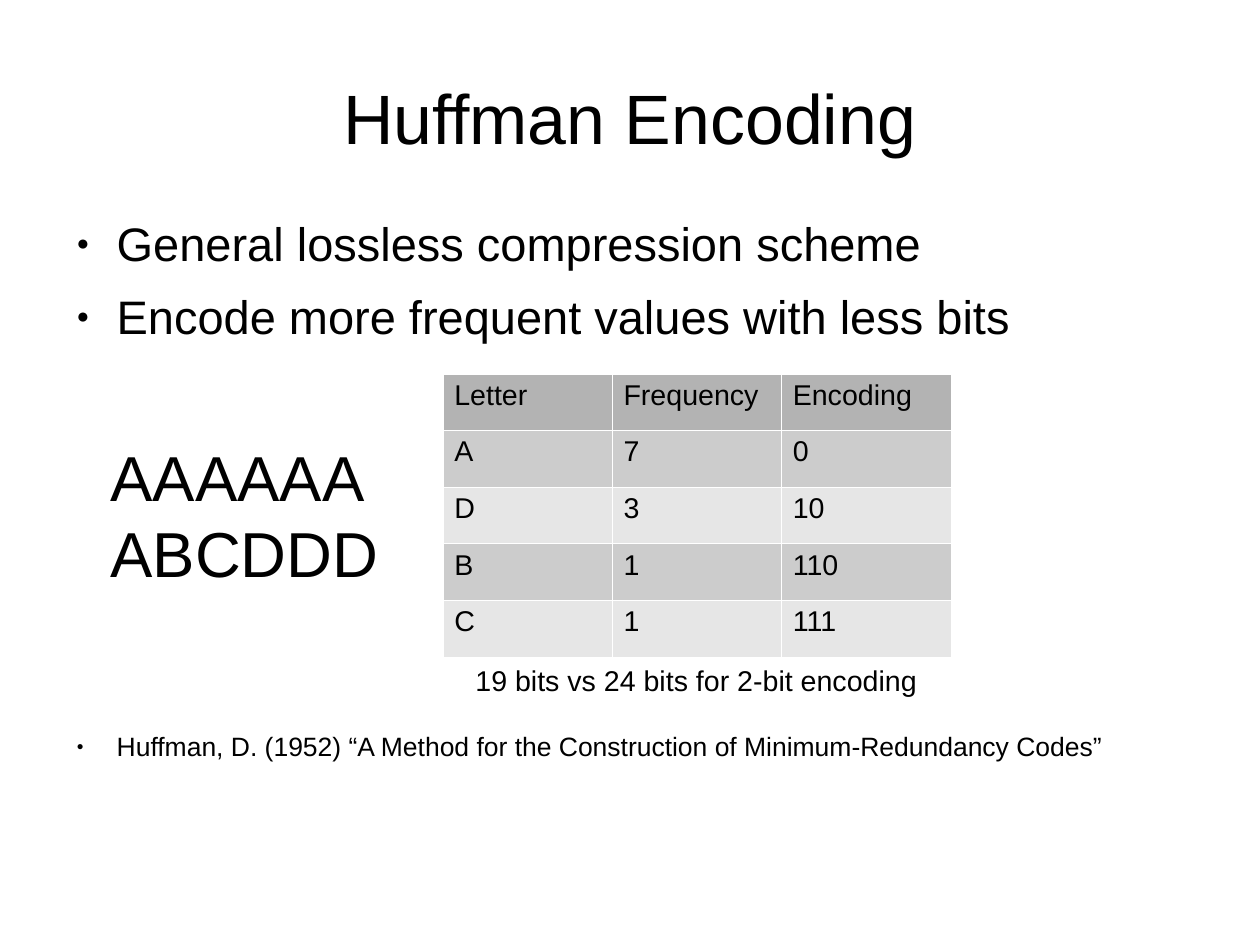
from lxml import etree
from pptx import Presentation
from pptx import util as u
from pptx.dml.color import RGBColor
from pptx.enum import text
from pptx.oxml import ns

WIDTH, HEIGHT = u.Cm(28), u.Cm(21)
FONT = "Arial"
COLORS = {"text": "000000", "border": "FFFFFF", "header": "B3B3B3",
          "odd_row": "CCCCCC", "even_row": "E6E6E6"}
CODE_TABLE = [
    ("Letter", "Frequency", "Encoding"),
    ("A", "7", "0"),
    ("D", "3", "10"),
    ("B", "1", "110"),
    ("C", "1", "111"),
]
# text, size and space before, in points
BULLETS = [
    ("General lossless compression scheme", 29.6, 14.2),
    ("Encode more frequent values with less bits", 29.6, 14.2),
    ("Huffman, D. (1952) “A Method for the Construction of Minimum-Redundancy Codes”", 16.7, 245),
]


def box(left, top, width, height):
    """Turn percentages of the slide's size into lengths."""
    return (int(WIDTH * left / 100), int(HEIGHT * top / 100),
            int(WIDTH * width / 100), int(HEIGHT * height / 100))


def add_xml(parent, tag, **attributes):
    return etree.SubElement(parent, ns.qn(tag), attributes)


def format_runs(paragraph, size):
    for run in paragraph.runs:
        run.font.name = FONT
        run.font.size = u.Pt(size)
        run.font.color.rgb = RGBColor.from_string(COLORS["text"])


def remove_margins(frame):
    frame.margin_left = frame.margin_right = frame.margin_top = frame.margin_bottom = 0


def set_title(slide, title):
    shape = slide.shapes.title
    shape.left, shape.top, shape.width, shape.height = box(5, 4, 90, 16.69)
    frame = shape.text_frame
    frame.text = title
    frame.auto_size = text.MSO_AUTO_SIZE.NONE
    frame.vertical_anchor = text.MSO_ANCHOR.MIDDLE
    remove_margins(frame)
    frame.paragraphs[0].alignment = text.PP_ALIGN.CENTER
    format_runs(frame.paragraphs[0], 44)


def add_text(slide, content, size, position):
    frame = slide.shapes.add_textbox(*position).text_frame
    frame.word_wrap = True
    frame.text = content
    format_runs(frame.paragraphs[0], size)


def add_bullet_mark(paragraph):
    properties = paragraph._p.get_or_add_pPr()
    properties.set("marL", str(u.Inches(0.47)))
    properties.set("indent", str(u.Inches(-0.35)))
    color = add_xml(properties, "a:buClr")
    add_xml(color, "a:srgbClr", val=COLORS["text"])
    add_xml(properties, "a:buSzPct", val="45000")
    add_xml(properties, "a:buFont", typeface=FONT)
    add_xml(properties, "a:buChar", char="●")


def add_bullets(slide, bullets, position):
    frame = slide.shapes.add_textbox(*position).text_frame
    frame.word_wrap = True
    remove_margins(frame)
    for index, (content, size, space_before) in enumerate(bullets):
        paragraph = frame.add_paragraph() if index else frame.paragraphs[0]
        paragraph.text = content
        paragraph.line_spacing = 0.9
        paragraph.space_before = u.Pt(space_before)
        add_bullet_mark(paragraph)
        format_runs(paragraph, size)


def add_borders(cell):
    properties = cell._tc.get_or_add_tcPr()
    for index, side in enumerate(("lnL", "lnR", "lnT", "lnB")):
        line = add_xml(properties, f"a:{side}", w=str(u.Pt(0.06)))
        fill = add_xml(line, "a:solidFill")
        add_xml(fill, "a:srgbClr", val=COLORS["border"])
        properties.insert(index, line)


def add_code_table(slide, rows, position):
    table = slide.shapes.add_table(len(rows), len(rows[0]), *position).table
    for row_index, row in enumerate(rows):
        band = "odd_row" if row_index % 2 else "even_row"
        color = COLORS[band if row_index else "header"]
        for column_index, content in enumerate(row):
            cell = table.cell(row_index, column_index)
            cell.text = content
            cell.fill.solid()
            cell.fill.fore_color.rgb = RGBColor.from_string(color)
            add_borders(cell)
            paragraph = cell.text_frame.paragraphs[0]
            format_runs(paragraph, 18)
            for run in paragraph.runs:
                run.font.bold = False


def main():
    presentation = Presentation()
    presentation.slide_width, presentation.slide_height = WIDTH, HEIGHT
    slide = presentation.slides.add_slide(presentation.slide_layouts.get_by_name("Title Only"))
    set_title(slide, "Huffman Encoding")
    add_bullets(slide, BULLETS, box(5, 23.34, 90, 57.92))
    add_text(slide, "AAAAAAABCDDD", 40, box(7.89, 45.71, 24.32, 16.2))
    add_code_table(slide, CODE_TABLE, box(35.15, 39.54, 40.3, 29.97))
    add_text(slide, "19 bits vs 24 bits for 2-bit encoding", 18, box(36.84, 69.53, 38.57, 8))
    presentation.save("out.pptx")


if __name__ == "__main__":
    main()
